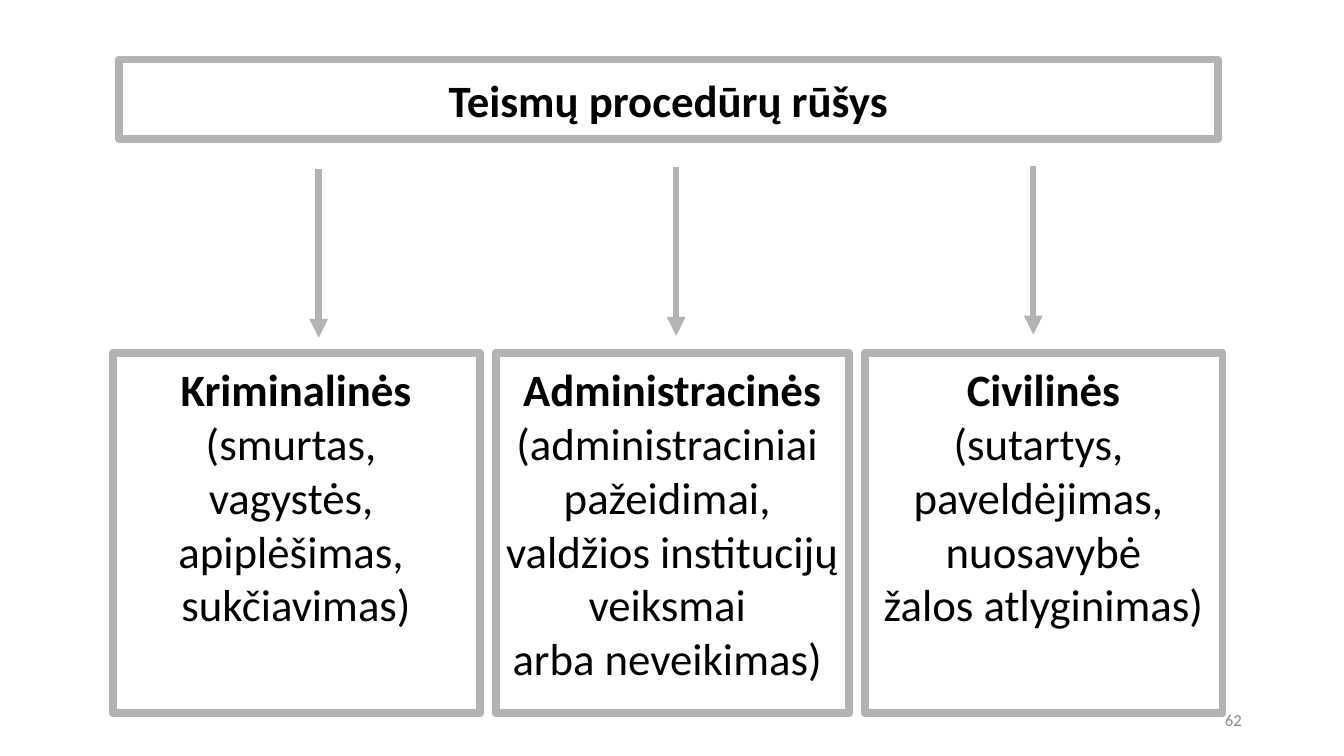
from pptx import Presentation
from pptx.dml.color import RGBColor
from pptx.enum.shapes import MSO_CONNECTOR, MSO_SHAPE
from pptx.enum.text import MSO_ANCHOR, MSO_AUTO_SIZE, PP_ALIGN
from pptx.util import Cm, Pt
from lxml.etree import SubElement
from pptx.oxml.ns import qn

GREY = RGBColor(0xB3, 0xB3, 0xB3)
BLACK = RGBColor(0, 0, 0)
MUTED = RGBColor(0x8B, 0x8B, 0x8B)


def frame_box(box, anchor):
    box.fill.background()
    box.line.color.rgb = GREY
    box.line.width = Pt(5.67)
    frame = box.text_frame
    frame.auto_size = MSO_AUTO_SIZE.NONE
    frame.word_wrap = False
    frame.vertical_anchor = anchor
    frame.margin_left = frame.margin_right = Cm(0.36)
    frame.margin_top = frame.margin_bottom = Cm(0.23)


def add_line(para, text, size=32, bold=False, color=BLACK, align=PP_ALIGN.CENTER):
    para.alignment = align
    run = para.add_run()
    run.text = text
    run.font.name = "Calibri"
    run.font.size = Pt(size)
    run.font.bold = bold
    run.font.color.rgb = color


deck = Presentation()
deck.slide_width, deck.slide_height = Cm(33.87), Cm(19.05)
slide = deck.slides.add_slide(deck.slide_layouts[5])
shapes = slide.shapes

# Title bar
title = shapes.title
title.left, title.top, title.width, title.height = Cm(3), Cm(1.5), Cm(27.69), Cm(2)
frame_box(title, MSO_ANCHOR.MIDDLE)
add_line(title.text_frame.paragraphs[0], "Teismų procedūrų rūšys", bold=True)

# Kinds of procedure: box left and width, arrow x and top, lines
kinds = [
    (2.84, 9.25, 8.03, 4.27,
     ["Kriminalinės", "(smurtas, ", "vagystės, ", "apiplėšimas, ", "sukčiavimas)"]),
    (12.5, 8.89, 17.04, 4.22,
     ["Administracinės", "(administraciniai ", "pažeidimai, ",
      "valdžios institucijų", "veiksmai ", "arba neveikimas) "]),
    (21.79, 9.02, 26.04, 4.19,
     ["Civilinės", "(sutartys, ", "paveldėjimas, ", "nuosavybė", "žalos atlyginimas)"]),
]
for left, width, x, top, lines in kinds:
    # Arrow down from the title
    arrow = shapes.add_connector(
        MSO_CONNECTOR.STRAIGHT, Cm(x), Cm(top), Cm(x), Cm(top + 4.24))
    arrow.line.color.rgb = GREY
    arrow.line.width = Pt(4.5)
    SubElement(arrow.line._get_or_add_ln(), qn("a:tailEnd"), type="triangle")
    SubElement(arrow._element.spPr, qn("a:effectLst"))

    # Box with a bold heading and its examples
    box = shapes.add_shape(
        MSO_SHAPE.RECTANGLE, Cm(left), Cm(8.89), Cm(width), Cm(9.09))
    box.shadow.inherit = False
    frame_box(box, MSO_ANCHOR.TOP)
    frame = box.text_frame
    for i, text in enumerate(lines):
        para = frame.add_paragraph() if i else frame.paragraphs[0]
        add_line(para, text, bold=i == 0)

# Slide number
number = shapes.add_textbox(Cm(23.93), Cm(17.65), Cm(7.62), Cm(1))
number.text_frame.word_wrap = True
number.text_frame.vertical_anchor = MSO_ANCHOR.MIDDLE
add_line(number.text_frame.paragraphs[0], "62", 12, color=MUTED, align=PP_ALIGN.RIGHT)

deck.save("out.pptx")
